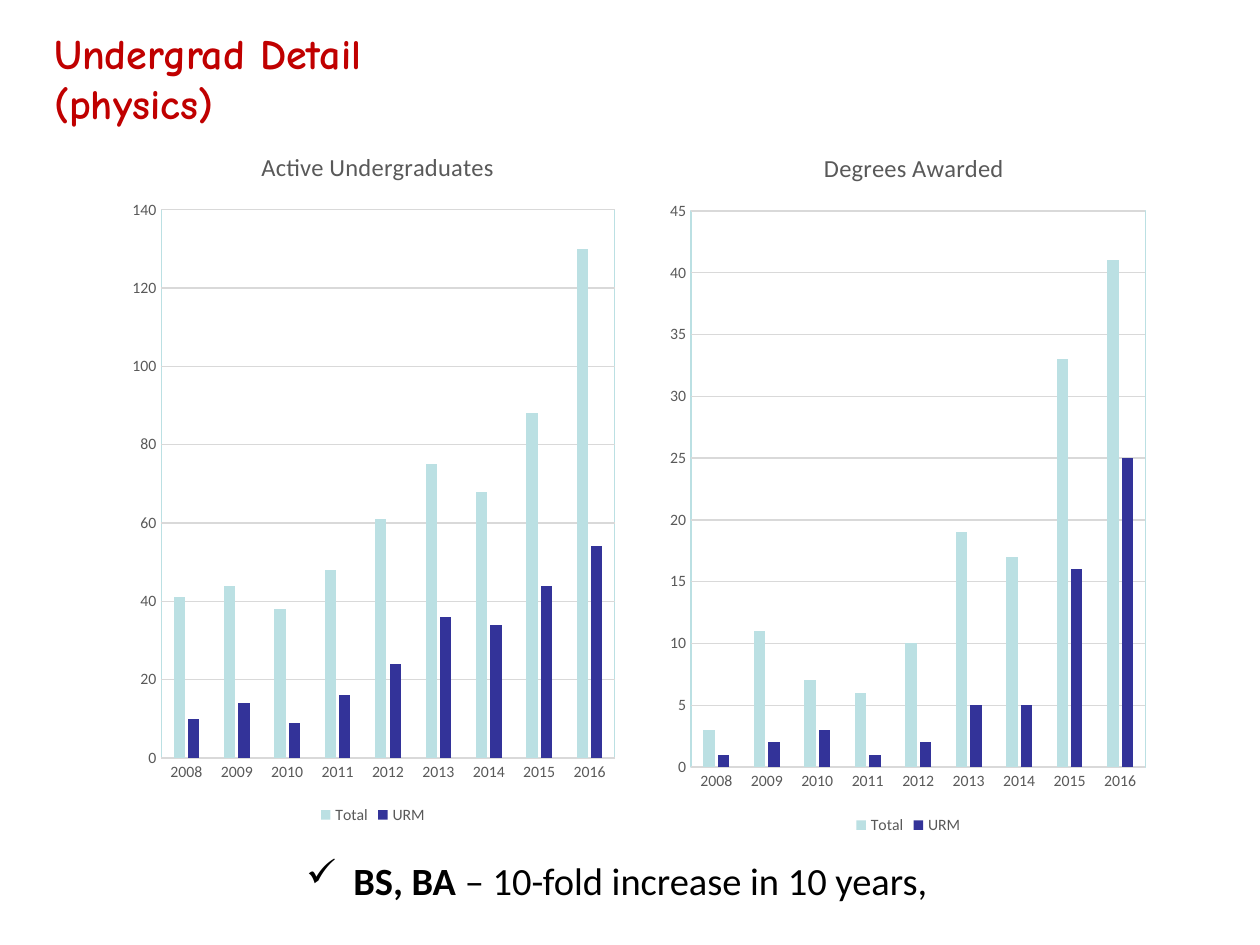
from pptx import Presentation
from pptx.chart.data import CategoryChartData as Data
from pptx.dml.color import RGBColor
from pptx.enum.chart import XL_CHART_TYPE as Kind, XL_LEGEND_POSITION as Side, XL_TICK_MARK as Tick
from pptx.oxml import parse_xml
from pptx.oxml.ns import nsdecls
from pptx.util import Pt


def rgb(text):
    return RGBColor.from_string(text)


def style(font, size, color, name="Calibri", bold=False):
    look = {"size": Pt(size), "name": name, "bold": bold}
    for key, val in look.items():
        setattr(font, key, val)
    font.color.rgb = rgb(color)


deck = Presentation()
deck.slide_width, deck.slide_height = Pt(720), Pt(540)
slide = deck.slides.add_slide(deck.slide_layouts[6])

# Closing remark with a check mark
note = slide.shapes.add_textbox(Pt(167.8), Pt(486), Pt(373.7), Pt(33.8)).text_frame
note.word_wrap = False
para = note.paragraphs[0]
props = para._p.get_or_add_pPr()
props.set("marL", str(Pt(27)))
props.set("indent", str(Pt(-27)))
props.append(parse_xml(f'<a:buChar {nsdecls("a")} char="✓"/>'))
para.space_after = Pt(12)
for text, bold in [("BS, BA ", True), ("– 10-fold increase in 10 years,", False)]:
    run = para.add_run()
    run.text = text
    style(run.font, 22, "000000", bold=bold)

# Heading
head = slide.shapes.add_textbox(Pt(23.8), Pt(12.2), Pt(284.4), Pt(36)).text_frame
head.word_wrap = True
run = head.paragraphs[0].add_run()
run.text = "Undergrad Detail (physics)"
style(run.font, 24, "C00000", "Comic Neue", True)

# Charts: title, box in points, title place and plot frame as fractions, values
years = [str(year) for year in range(2008, 2017)]
hues = ["BBE0E3", "333399"]
charts = [
    ("Active Undergraduates", (69.1, 67, 288, 406.8),
     {"x": 0.27, "y": 0.04}, {"x": 0.08, "y": 0.13, "w": 0.9, "h": 0.77},
     [41, 44, 38, 48, 61, 75, 68, 88, 130], [10, 14, 9, 16, 24, 36, 34, 44, 54]),
    ("Degrees Awarded", (378, 67, 282.2, 412.6),
     {"x": 0.32, "y": 0.04}, {"x": 0.06, "y": 0.13, "w": 0.92, "h": 0.77},
     [3, 11, 7, 6, 10, 19, 17, 33, 41], [1, 2, 3, 1, 2, 5, 5, 16, 25]),
]
for title, box, spot, frame, total, urm in charts:
    data = Data()
    data.categories = years
    data.add_series("Total", total)
    data.add_series("URM", urm)
    place = [Pt(v) for v in box]
    chart = slide.shapes.add_chart(Kind.COLUMN_CLUSTERED, *place, data).chart
    style(chart.font, 10, "000000")

    chart.has_title = True
    run = chart.chart_title.text_frame.paragraphs[0].add_run()
    run.text = title
    style(run.font, 14, "595959")

    chart.has_legend = True
    chart.legend.position = Side.BOTTOM
    chart.legend.include_in_layout = False
    style(chart.legend.font, 9, "595959")

    cat, val = chart.category_axis, chart.value_axis
    for axis in (cat, val):
        axis.major_tick_mark = axis.minor_tick_mark = Tick.NONE
        style(axis.tick_labels.font, 9, "595959")
    val.format.line.fill.background()
    val.has_major_gridlines = True
    for line in (cat.format.line, val.major_gridlines.format.line):
        line.color.rgb = rgb("D9D9D9")
        line.width = Pt(0.75)

    plot = chart.plots[0]
    plot.gap_width, plot.overlap = 219, -27
    plot.vary_by_categories = False
    for series, hue in zip(plot.series, hues):
        series.format.fill.solid()
        series.format.fill.fore_color.rgb = rgb(hue)

    # Fixed title and plot positions, and a thin frame around the plot
    area = chart._chartSpace.chart.plotArea
    name = chart.chart_title._element
    for part, spots in ((name, spot), (area, frame)):
        for old in part.findall("{*}layout"):
            part.remove(old)
        inner = '<c:layoutTarget val="inner"/>' if part is area else ""
        modes = "".join(f'<c:{k}Mode val="edge"/>' for k in "xy")
        sizes = "".join(f'<c:{k} val="{v}"/>' for k, v in spots.items())
        layout = parse_xml(f'<c:layout {nsdecls("c")}><c:manualLayout>{inner}{modes}{sizes}'
                           '</c:manualLayout></c:layout>')
        part.insert(0 if part is area else 1, layout)
    area.append(parse_xml(
        f'<c:spPr {nsdecls("c", "a")}><a:noFill/><a:ln w="{Pt(0.75)}"><a:solidFill>'
        '<a:srgbClr val="BBE0E3"/></a:solidFill></a:ln></c:spPr>'))

deck.save("out.pptx")
